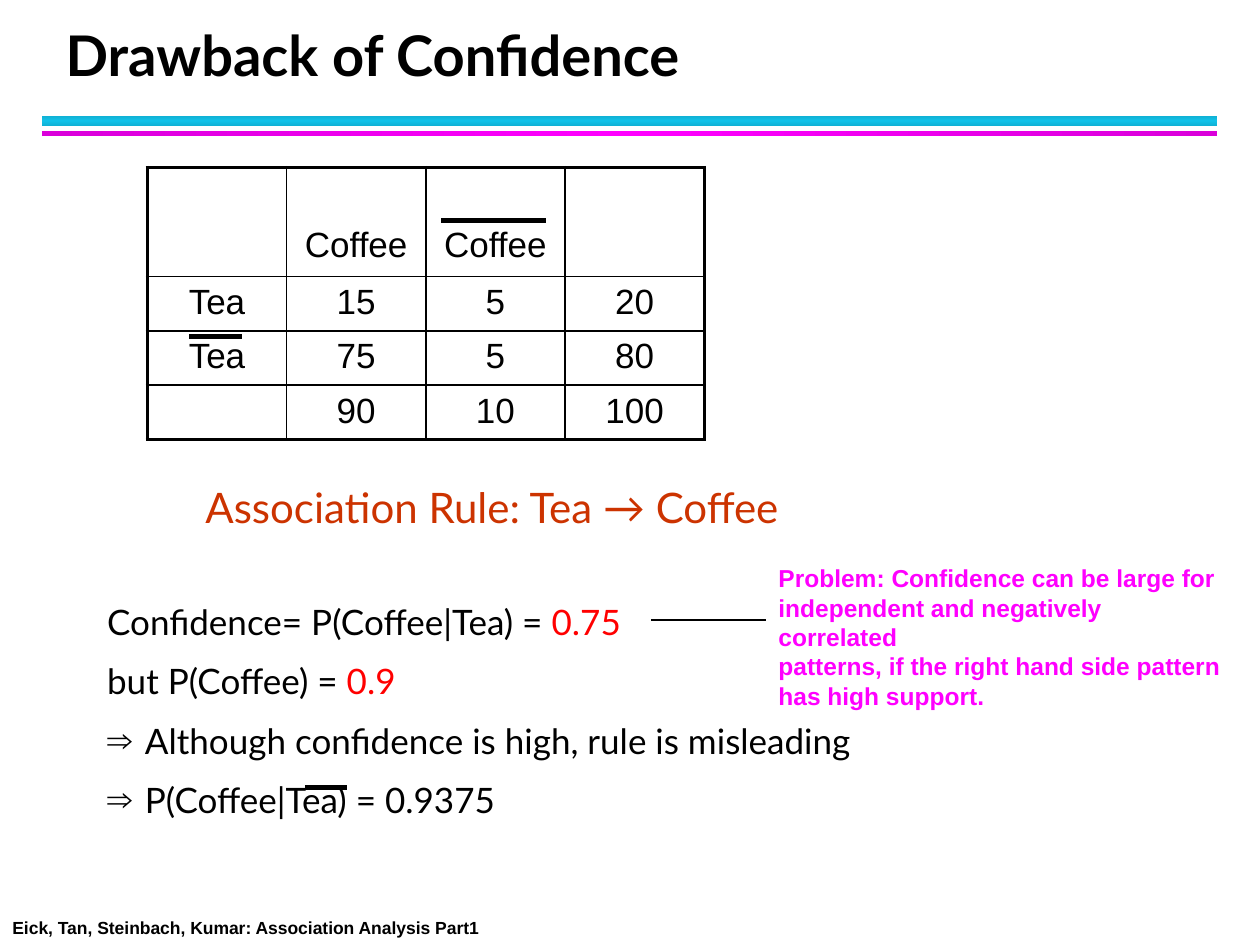
from copy import deepcopy

from lxml import etree
from pptx import Presentation
from pptx.dml.color import RGBColor
from pptx.enum.shapes import MSO_CONNECTOR, MSO_SHAPE
from pptx.enum.text import MSO_ANCHOR, MSO_AUTO_SIZE, PP_ALIGN
from pptx.oxml.ns import qn
from pptx.util import Inches, Pt

BLACK = RGBColor(0x00, 0x00, 0x00)
RED = RGBColor(0xFF, 0x00, 0x00)
RUST = RGBColor(0xCC, 0x33, 0x00)
MAGENTA = RGBColor(0xFF, 0x00, 0xFF)
DARK_MAGENTA = RGBColor(0xDA, 0x00, 0xDA)
CYAN = RGBColor(0x12, 0xC2, 0xE9)
DARK_CYAN = RGBColor(0x10, 0xB0, 0xD3)

STRAIGHT = MSO_CONNECTOR.STRAIGHT
RECTANGLE = MSO_SHAPE.RECTANGLE
LEFT, CENTER = PP_ALIGN.LEFT, PP_ALIGN.CENTER
TOP, MIDDLE, BOTTOM = MSO_ANCHOR.TOP, MSO_ANCHOR.MIDDLE, MSO_ANCHOR.BOTTOM
NO_FIT = MSO_AUTO_SIZE.NONE
LEFT_SIDE = 1

COUNTS = [
    ["", "Coffee", "Coffee", ""],
    ["Tea", "15", "5", "20"],
    ["Tea", "75", "5", "80"],
    ["", "90", "10", "100"],
]
FINDINGS = [
    [("Confidence= P(Coffee|Tea) = ", BLACK), ("0.75", RED)],
    [("but P(Coffee) = ", BLACK), ("0.9", RED)],
    [("Although confidence is high, rule is misleading", BLACK)],
    [("P(Coffee|Tea) = 0.9375", BLACK)],
]
FIRST_BULLET = 2
PROBLEM = [
    ["Problem: Confidence can be large for"],
    ["independent and negatively", "correlated"],
    ["patterns, if the right hand side pattern"],
    ["has high support."],
]


def place(shape, left, top, width, height):
    """Move a shape to a box given in inches."""
    shape.left, shape.top = Inches(left), Inches(top)
    shape.width, shape.height = Inches(width), Inches(height)


def add_span(para, text, font, size, color, bold=False):
    """Add one formatted run to a paragraph."""
    span = para.add_run()
    span.text = text
    span.font.name, span.font.size = font, Pt(size)
    span.font.color.rgb, span.font.bold = color, bold


def add_line(page, start, end, weight):
    """Draw a plain black line between two points in inches."""
    line = page.shapes.add_connector(STRAIGHT, *map(Inches, start + end))
    line.line.color.rgb, line.line.width = BLACK, Pt(weight)
    etree.SubElement(line._element.spPr, qn("a:effectLst"))
    return line


def add_overline(page, left, top, width):
    """Draw a negation bar above a word."""
    add_line(page, (left, top), (left + width, top), 3)


def add_text_box(page, left, top, width, height):
    """Add a wrapping text box and return it."""
    box = page.shapes.add_textbox(*map(Inches, (left, top, width, height)))
    box.text_frame.word_wrap = True
    return box


def add_band(page, left, top, width, height, edge, middle, angle):
    """Draw a band whose colour changes from the edges to the middle."""
    band = page.shapes.add_shape(RECTANGLE, *map(Inches, (left, top, width, height)))
    band.shadow.inherit = False
    band.line.fill.background()
    band.fill.gradient()
    band.fill.gradient_angle = angle
    stop_list = band._element.spPr.find(".//" + qn("a:gsLst"))
    stop_list.append(deepcopy(stop_list[0]))
    for index, stop in enumerate(band.fill.gradient_stops):
        stop.position = index / 2
        stop.color.rgb = middle if index == 1 else edge


def add_heading(page, left, top, width, height):
    """Fill the title placeholder and underline it with two bands."""
    title = page.shapes.title
    place(title, left, top, width, height)
    frame = title.text_frame
    frame.auto_size, frame.vertical_anchor = NO_FIT, BOTTOM
    para = frame.paragraphs[0]
    para.alignment, para.line_spacing = LEFT, Pt(36)
    add_span(para, "Drawback of Confidence", "Lato", 32, BLACK, True)
    add_band(page, 0.33, top + 0.75, 9.33, 0.08, DARK_CYAN, CYAN, 90)
    add_band(page, 0.33, top + 0.87, 9.33, 0.04, DARK_MAGENTA, MAGENTA, 0)


def add_borders(cell, outer_sides):
    """Give a cell thin borders, thicker on the outside of the table."""
    properties = cell._tc.get_or_add_tcPr()
    for side in ("lnL", "lnR", "lnT", "lnB"):
        weight = Pt(2.25) if side in outer_sides else Pt(1)
        border = etree.SubElement(properties, qn("a:" + side), w=str(weight))
        fill = etree.SubElement(border, qn("a:solidFill"))
        etree.SubElement(fill, qn("a:srgbClr"), val=str(BLACK))


def add_count_table(page, left, top, width, height):
    """Add the tea and coffee counts with bars over the negated words."""
    last = len(COUNTS) - 1
    frame = page.shapes.add_table(
        len(COUNTS), len(COUNTS[0]), *map(Inches, (left, top, width, height)))
    table = frame.table
    table.first_row = table.horz_banding = False
    for column in table.columns:
        column.width = Inches(width / len(COUNTS[0]))
    for index, row in enumerate(table.rows):
        row.height = Inches(height * (2 if index == 0 else 1) / (len(COUNTS) + 1))
    for row, values in enumerate(COUNTS):
        for column, value in enumerate(values):
            cell = table.cell(row, column)
            edges = {"lnL": column == 0, "lnR": column == last,
                     "lnT": row == 0, "lnB": row == last}
            add_borders(cell, [side for side, outer in edges.items() if outer])
            cell.fill.background()
            if row == 0:
                cell.vertical_anchor, cell.margin_bottom = BOTTOM, Inches(0.09)
            if value:
                para = cell.text_frame.paragraphs[0]
                para.alignment = CENTER
                add_span(para, value, "Arial", 20, BLACK)
    add_overline(page, left + 2.33, top + 0.42, 0.83)
    add_overline(page, left + 0.33, top + 1.34, 0.42)


def set_bullet(para, indent, char=None):
    """Set the left indent and hang a bullet in it when one is given."""
    properties = para._p.get_or_add_pPr()
    properties.set("marL", str(Inches(indent)))
    properties.set("indent", str(Inches(-indent if char else 0)))
    if char:
        etree.SubElement(properties, qn("a:buChar"), char=char)
    else:
        etree.SubElement(properties, qn("a:buNone"))


def add_findings(page, left, top, width, height):
    """Fill the body placeholder with the rule and what follows from it."""
    body = page.placeholders[1]
    place(body, left, top, width, height)
    frame = body.text_frame
    frame.auto_size, frame.vertical_anchor = NO_FIT, TOP
    rule = frame.paragraphs[0]
    rule.space_before, rule.space_after = Pt(0), Pt(29)
    set_bullet(rule, 0.78)
    add_span(rule, "Association Rule: Tea → Coffee", "Lato", 24, RUST)
    for index, spans in enumerate(FINDINGS):
        para = frame.add_paragraph()
        para.space_before = Pt(10)
        if index >= FIRST_BULLET:
            set_bullet(para, 0.3, "⇒")
        else:
            set_bullet(para, 0)
        for text, color in spans:
            add_span(para, text, "Lato", 20, color)
    add_overline(page, left + 1.67, top + 2.48, 0.33)


def add_problem(page, left, top, width, height):
    """Add the warning and the line that leads to it."""
    box = add_text_box(page, left, top, width, height)
    frame = box.text_frame
    for index, lines in enumerate(PROBLEM):
        para = frame.add_paragraph() if index else frame.paragraphs[0]
        for number, text in enumerate(lines):
            if number:
                para.add_line_break()
            add_span(para, text, "Arial", 14, MAGENTA, True)
    middle = top + height / 2
    leader = add_line(page, (left - 0.91, middle), (left, middle), 1)
    leader.end_connect(box, LEFT_SIDE)


def add_credit(page, left, top, width, height):
    """Add the authors at the foot of the page."""
    box = add_text_box(page, left, top, width, height)
    add_span(box.text_frame.paragraphs[0],
             "Eick, Tan, Steinbach, Kumar: Association Analysis Part1",
             "Arial", 10, BLACK, True)


def main():
    """Build the page and save the deck."""
    deck = Presentation()
    deck.slide_width, deck.slide_height = Inches(10), Inches(7.5)
    page = deck.slides.add_slide(deck.slide_layouts[1])
    add_heading(page, 0.42, 0.17, 9.06, 0.58)
    add_count_table(page, 1.17, 1.33, 4.42, 2.16)
    add_findings(page, 0.75, 3.77, 8.08, 2.9)
    add_problem(page, 6.08, 4.42, 3.8, 1)
    add_credit(page, 0, 7.23, 4, 0.27)
    deck.save("out.pptx")


if __name__ == "__main__":
    main()
